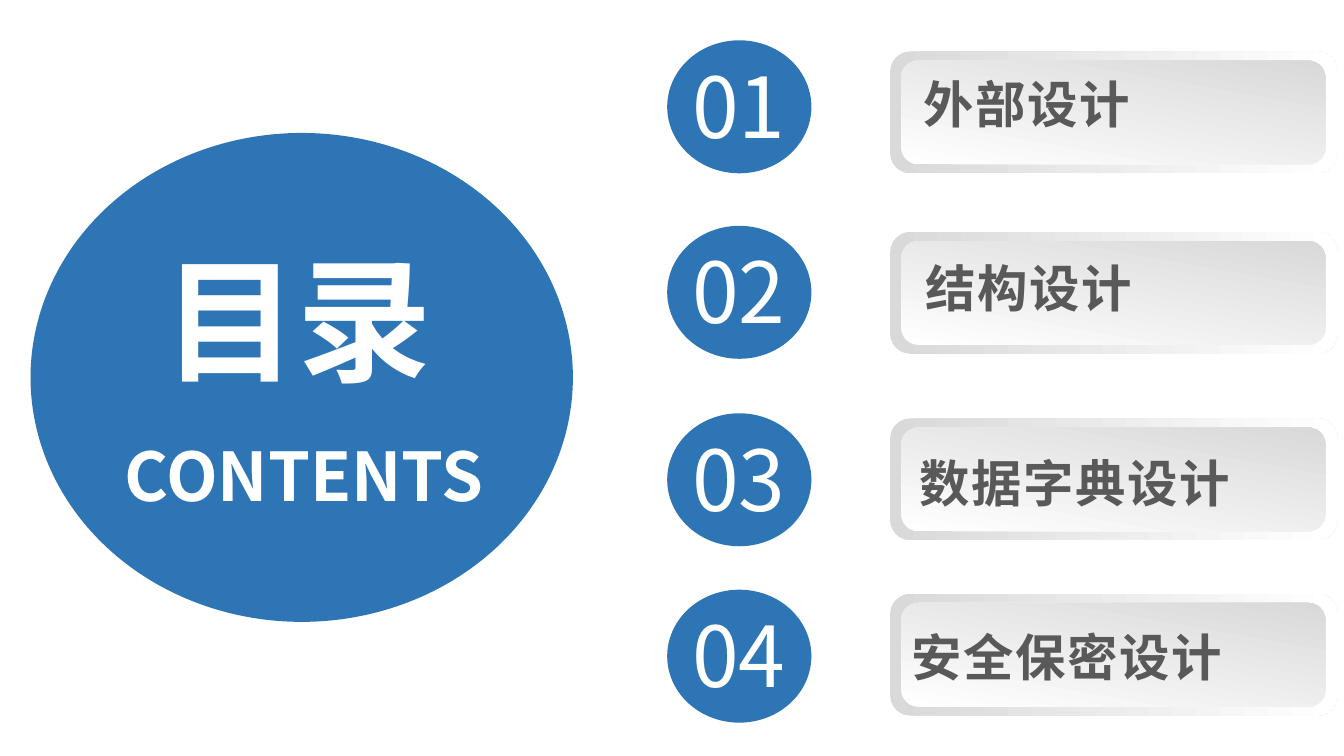
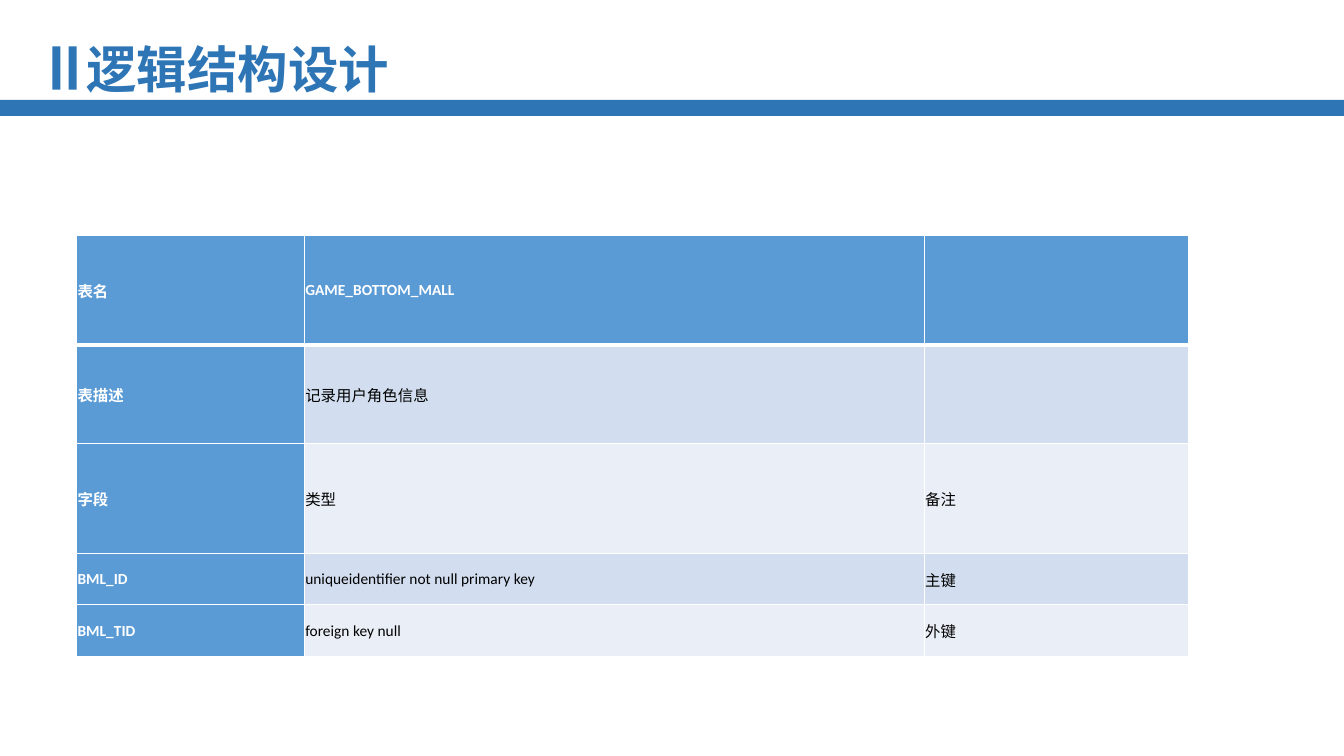
"""Build a contents slide and a logical structure slide with a data table."""
from dataclasses import dataclass
from typing import Any

from lxml import etree
from pptx import Presentation
from pptx import util as u
from pptx.dml.color import RGBColor
from pptx.enum import shapes, text
from pptx.oxml import ns

WHITE = RGBColor(0xFF, 0xFF, 0xFF)
BLACK = RGBColor(0x00, 0x00, 0x00)
BLUE = RGBColor(0x2E, 0x75, 0xB6)
SILVER = RGBColor(0xD9, 0xD9, 0xD9)
LABEL_GREY = RGBColor(0x59, 0x59, 0x59)
HEADER_BLUE = RGBColor(0x5B, 0x9B, 0xD5)
BANDS = (RGBColor(0xD2, 0xDE, 0xEF), RGBColor(0xEA, 0xEF, 0xF7))

CJK_FONT = "Noto Sans CJK SC"
TABLE_FONT = "Calibri"
SLIDE_WIDTH, SLIDE_HEIGHT = 960, 540
Shape = shapes.MSO_SHAPE


@dataclass(frozen=True)
class Box:
    left: float
    top: float
    width: float
    height: float

    def lengths(self) -> list[u.Length]:
        return [u.Pt(value) for value in (self.left, self.top, self.width, self.height)]


@dataclass(frozen=True)
class Chapter:
    number: str
    title: str
    circle_top: float
    card_top: float
    title_left: float
    title_top: float


CHAPTERS = (
    Chapter("01", "外部设计", 28.8, 36.7, 652.3, 49),
    Chapter("02", "结构设计", 161.3, 165.6, 653.8, 180),
    Chapter("03", "数据字典设计", 295.2, 298.8, 649.4, 319.7),
    Chapter("04", "安全保密设计", 421.2, 424.1, 643.7, 443.5),
)

TABLE_ROWS = (
    ("表名", "GAME_BOTTOM_MALL", ""),
    ("表描述", "记录用户角色信息", ""),
    ("字段", "类型", "备注"),
    ("BML_ID", "uniqueidentifier not null primary key", "主键"),
    ("BML_TID", "foreign key null", "外键"),
)
COLUMN_WIDTHS = (162.7, 442.8, 188.6)
ROW_HEIGHTS = (78.5, 70.5, 78.5, 36.7, 36.7)


def write_text(frame: Any, content: str, *, size: float, color: RGBColor,
               font: str = CJK_FONT, bold: bool = False, spacing: float = 0) -> None:
    run = frame.paragraphs[0].add_run()
    run.text = content
    run.font.size = u.Pt(size)
    run.font.bold = bold
    run.font.color.rgb = color
    run.font.name = font
    properties = run._r.get_or_add_rPr()
    east_asian = etree.Element(ns.qn("a:ea"), typeface=CJK_FONT)
    properties.find(ns.qn("a:latin")).addnext(east_asian)
    if spacing:
        properties.set("spc", str(round(spacing * 100)))


def add_text(slide: Any, box: Box, content: str, *, wrap: bool = True, **style: Any) -> None:
    frame = slide.shapes.add_textbox(*box.lengths()).text_frame
    frame.word_wrap = wrap
    write_text(frame, content, **style)


def add_plain(slide: Any, kind: Shape, box: Box) -> Any:
    shape = slide.shapes.add_shape(kind, *box.lengths())
    shape.shadow.inherit = False
    shape.line.fill.background()
    shape.fill.solid()
    shape.fill.fore_color.rgb = BLUE
    return shape


def add_card_layer(slide: Any, box: Box, start: RGBColor, end: RGBColor, angle: float) -> None:
    fill = add_plain(slide, Shape.ROUNDED_RECTANGLE, box).fill
    fill.gradient()
    fill.gradient_angle = angle
    for stop, color in zip(fill.gradient_stops, (start, end)):
        stop.color.rgb = color


def add_chapter(slide: Any, chapter: Chapter) -> None:
    add_plain(slide, Shape.OVAL, Box(476.6, chapter.circle_top, 103, 95))
    add_text(slide, Box(487.4, chapter.circle_top + 6.5, 100.8, 79.9), chapter.number,
             size=60, color=WHITE)
    add_card_layer(slide, Box(635.8, chapter.card_top, 319.7, 87.1), SILVER, WHITE, 0)
    add_card_layer(slide, Box(643.7, chapter.card_top + 6.6, 303.1, 74.2), WHITE, SILVER, 80)
    add_text(slide, Box(chapter.title_left, chapter.title_top, 283, 51), chapter.title,
             size=36, color=LABEL_GREY, bold=True, spacing=1.2)


def add_title(slide: Any, title: str) -> None:
    add_plain(slide, Shape.RECTANGLE, Box(0, 71.3, SLIDE_WIDTH, 11.5))
    add_text(slide, Box(54.7, 23.8, 232.6, 51), title, wrap=False,
             size=36, color=BLUE, bold=True)
    for left in (37.4, 49):
        add_plain(slide, Shape.RECTANGLE, Box(left, 33.1, 5.8, 31))


def set_borders(cell: Any, top: float, bottom: float) -> None:
    properties = cell._tc.get_or_add_tcPr()
    widths = {"lnL": 1, "lnR": 1, "lnT": top, "lnB": bottom}
    for index, (side, width) in enumerate(widths.items()):
        line = etree.Element(ns.qn(f"a:{side}"), w=str(u.Pt(width)))
        fill = etree.SubElement(line, ns.qn("a:solidFill"))
        etree.SubElement(fill, ns.qn("a:srgbClr"), val=str(WHITE))
        properties.insert(index, line)


def format_cell(cell: Any, content: str, row: int, column: int) -> None:
    is_header = row == 0 or column == 0
    cell.fill.solid()
    cell.fill.fore_color.rgb = HEADER_BLUE if is_header else BANDS[(row - 1) % 2]
    cell.vertical_anchor = text.MSO_ANCHOR.MIDDLE
    cell.margin_left = cell.margin_right = cell.margin_top = u.Pt(0.7)
    cell.margin_bottom = u.Pt(0)
    set_borders(cell, 3 if row == 1 else 1, 3 if row == 0 else 1)
    if content:
        write_text(cell.text_frame, content, size=11, font=TABLE_FONT,
                   color=WHITE if is_header else BLACK, bold=is_header)


def add_field_table(slide: Any) -> None:
    box = Box(54.7, 167.8, sum(COLUMN_WIDTHS), sum(ROW_HEIGHTS))
    table = slide.shapes.add_table(len(ROW_HEIGHTS), len(COLUMN_WIDTHS), *box.lengths()).table
    table.first_col = True
    for column, width in zip(table.columns, COLUMN_WIDTHS):
        column.width = u.Pt(width)
    for row, height in zip(table.rows, ROW_HEIGHTS):
        row.height = u.Pt(height)
    for row_index, contents in enumerate(TABLE_ROWS):
        for column_index, content in enumerate(contents):
            format_cell(table.cell(row_index, column_index), content, row_index, column_index)


def build_contents(slide: Any) -> None:
    add_plain(slide, Shape.OVAL, Box(21.8, 95, 387.4, 349.2))
    add_text(slide, Box(109.4, 165.6, 212.4, 123.8), "目录", size=96, color=WHITE, bold=True)
    add_text(slide, Box(82.1, 306.7, 285.8, 65.5), "CONTENTS", size=48, color=WHITE, bold=True)
    for chapter in CHAPTERS:
        add_chapter(slide, chapter)


def build_structure(slide: Any) -> None:
    add_title(slide, "逻辑结构设计")
    add_field_table(slide)


def main() -> None:
    presentation = Presentation()
    presentation.slide_width = u.Pt(SLIDE_WIDTH)
    presentation.slide_height = u.Pt(SLIDE_HEIGHT)
    blank = presentation.slide_layouts[6]
    for build in (build_contents, build_structure):
        build(presentation.slides.add_slide(blank))
    presentation.save("out.pptx")


if __name__ == "__main__":
    main()
